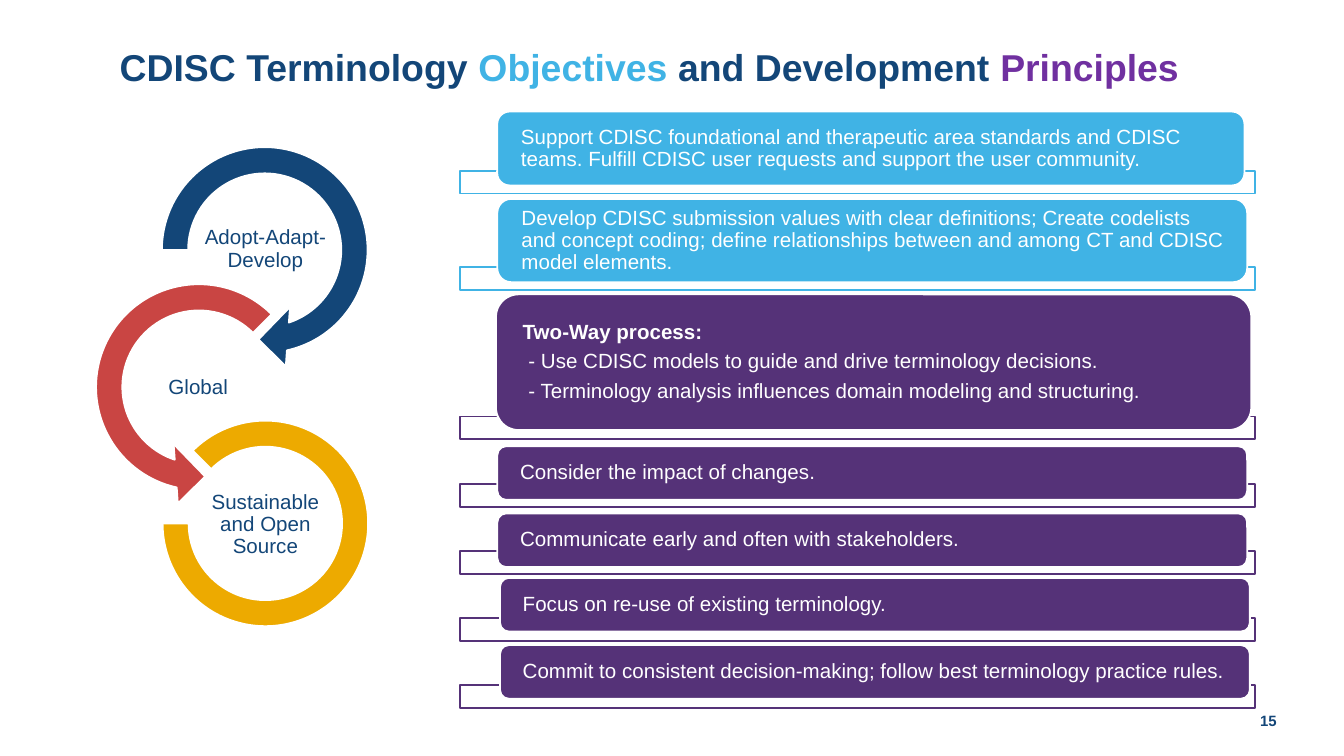
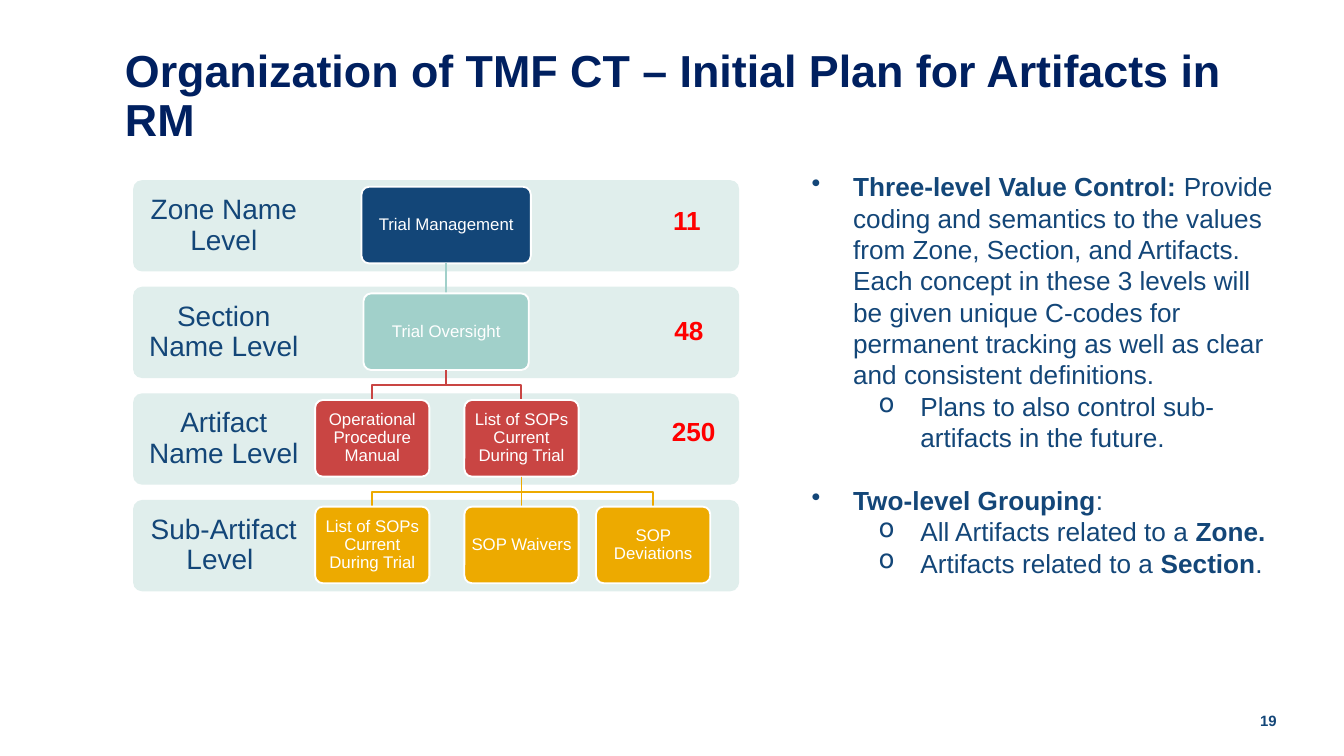
from dataclasses import dataclass
from typing import Any, Optional

from lxml.etree import SubElement
from pptx import Presentation
from pptx.dml.color import RGBColor
from pptx.enum.shapes import MSO_CONNECTOR, MSO_SHAPE
from pptx.enum.text import MSO_ANCHOR, MSO_AUTO_SIZE, PP_ALIGN
from pptx.oxml.ns import qn
from pptx.util import Inches, Pt

COLOURS = {
    "navy": "134678", "sky": "40B3E5", "violet": "7030A0", "purple": "553278",
    "red": "C94543", "gold": "EDAA00", "teal": "A1D0CA", "mist": "E0EEEC",
    "midnight": "002060", "count": "FF0000", "white": "FFFFFF",
}
MARGINS = ("margin_left", "margin_top", "margin_right", "margin_bottom")
BULLETS = [("•", 0.31), ("o", 0.81)]
HANGING = 0.31


@dataclass
class Run:
    text: str
    colour: Optional[str] = None
    bold: Optional[bool] = None


@dataclass
class Para:
    runs: list[Run]
    level: Optional[int] = None
    before: float = 0


@dataclass
class TextStyle:
    size: float
    colour: str = "white"
    bold: bool = False
    align: PP_ALIGN = PP_ALIGN.LEFT
    anchor: MSO_ANCHOR = MSO_ANCHOR.MIDDLE
    spacing: Optional[float] = 0.9
    insets: tuple[float, ...] = (0, 0, 0, 0)


@dataclass
class Card:
    box: tuple[float, ...]
    frame_top: float
    colour: str
    paras: list[Para]


@dataclass
class Ring:
    kind: MSO_SHAPE
    box: tuple[float, ...]
    adjustments: list[float]
    colour: str
    label: str
    label_at: tuple[float, float]


@dataclass
class Level:
    label: str
    count: str = ""
    count_box: tuple[float, ...] = ()


@dataclass
class Node:
    label: str
    level: int
    centre: float
    width: float
    colour: str
    parent: Optional[int] = None


def rgb(name: str) -> RGBColor:
    return RGBColor.from_string(COLOURS[name])


def inches(values: tuple[float, ...]) -> list[int]:
    return [Inches(value) for value in values]


def apply(target: Any, values: dict[str, Any]) -> None:
    for name, value in values.items():
        setattr(target, name, value)


def plain(text: str) -> list[Para]:
    return [Para([Run(text)])]


def write(frame: Any, paras: list[Para], style: TextStyle) -> None:
    apply(frame, {"word_wrap": True, "auto_size": MSO_AUTO_SIZE.NONE,
                  "vertical_anchor": style.anchor,
                  **dict(zip(MARGINS, inches(style.insets)))})
    for index, para in enumerate(paras):
        paragraph = frame.add_paragraph() if index else frame.paragraphs[0]
        if para.level is not None:
            add_bullet(paragraph, para.level)
        apply(paragraph, {"alignment": style.align, "line_spacing": style.spacing,
                          "space_before": Pt(para.before), "space_after": Pt(0)})
        for part in para.runs:
            run = paragraph.add_run()
            run.text = part.text
            bold = style.bold if part.bold is None else part.bold
            apply(run.font, {"name": "Arial", "size": Pt(style.size), "bold": bold})
            run.font.color.rgb = rgb(part.colour or style.colour)


def add_bullet(paragraph: Any, level: int) -> None:
    mark, left = BULLETS[level]
    paragraph.level = level
    properties = paragraph._p.get_or_add_pPr()
    properties.set("marL", str(Inches(left)))
    properties.set("indent", str(-Inches(HANGING)))
    SubElement(properties, qn("a:buChar")).set("char", mark)


def add_label(slide: Any, box: tuple[float, ...], paras: list[Para], style: TextStyle) -> None:
    write(slide.shapes.add_textbox(*inches(box)).text_frame, paras, style)


def add_figure(slide: Any, kind: MSO_SHAPE, box: tuple[float, ...], fill: str,
               line: Optional[str] = "white") -> Any:
    figure = slide.shapes.add_shape(kind, *inches(box))
    figure.shadow.inherit = False
    figure.fill.solid()
    figure.fill.fore_color.rgb = rgb(fill)
    if line:
        figure.line.color.rgb = rgb(line)
        figure.line.width = Pt(1)
    else:
        figure.line.fill.background()
    return figure


def add_titled_slide(deck: Any, box: tuple[float, ...], runs: list[Run],
                     style: TextStyle, number: str) -> Any:
    slide = deck.slides.add_slide(deck.slide_layouts[5])
    title = slide.shapes.title
    apply(title, dict(zip(("left", "top", "width", "height"), inches(box))))
    write(title.text_frame, [Para(runs)], style)
    add_label(slide, (9.17, 5.21, 0.33, 0.3), plain(number), PAGE_NUMBER)
    return slide


def add_card(slide: Any, card: Card) -> None:
    frame = add_figure(slide, MSO_SHAPE.RECTANGLE, (3.42, card.frame_top, 5.92, 0.17),
                       "white", card.colour)
    white = frame._element.spPr.find(qn("a:solidFill"))[0]
    SubElement(white, qn("a:alpha")).set("val", "90000")
    body = add_figure(slide, MSO_SHAPE.ROUNDED_RECTANGLE, card.box, card.colour)
    write(body.text_frame, card.paras, CARD_TEXT)


def add_ring(slide: Any, ring: Ring) -> None:
    figure = add_figure(slide, ring.kind, ring.box, ring.colour)
    for index, value in enumerate(ring.adjustments):
        figure.adjustments[index] = value
    add_label(slide, (*ring.label_at, 0.99, 0.49), plain(ring.label), RING_TEXT)


def level_top(level: int) -> float:
    return 1.34 + level * (3.72 - 1.34) / 3


def node_top(node: Node) -> float:
    return level_top(node.level) + 0.05


def add_level(slide: Any, index: int, level: Level) -> None:
    top = level_top(index)
    band = add_figure(slide, MSO_SHAPE.ROUNDED_RECTANGLE, (0.99, top, 4.51, 0.68), "mist", None)
    band.adjustments[0] = 0.1
    add_label(slide, (0.99, top, 1.35, 0.68), plain(level.label), LEVEL_TEXT)
    if level.count:
        add_label(slide, level.count_box, plain(level.count), COUNT_TEXT)


def add_link(slide: Any, parent: Node, child: Node) -> None:
    """Join the foot of the parent to the head of the child."""
    start, end = node_top(parent) + NODE_HEIGHT, node_top(child)
    if parent.centre == child.centre:
        link = slide.shapes.add_connector(
            MSO_CONNECTOR.STRAIGHT, *inches((parent.centre, start, child.centre, end)))
        SubElement(link._element.spPr, qn("a:effectLst"))
    else:
        middle = (start + end) / 2
        bends = [(parent.centre, middle), (child.centre, middle), (child.centre, end)]
        builder = slide.shapes.build_freeform(*inches((parent.centre, start)))
        builder.add_line_segments([tuple(inches(bend)) for bend in bends], close=False)
        link = builder.convert_to_shape()
        link.shadow.inherit = False
        link.fill.background()
    link.line.color.rgb = rgb(child.colour)
    link.line.width = Pt(1)


def add_node(slide: Any, node: Node) -> None:
    box = (node.centre - node.width / 2, node_top(node), node.width, NODE_HEIGHT)
    figure = add_figure(slide, MSO_SHAPE.ROUNDED_RECTANGLE, box, node.colour)
    figure.adjustments[0] = 0.1
    write(figure.text_frame, plain(node.label), NODE_TEXT)


NODE_HEIGHT = 0.57
TEXT_INSETS = (0.1, 0.05, 0.1, 0.05)
CENTRE = PP_ALIGN.CENTER
PAGE_NUMBER = TextStyle(8, "navy", True, PP_ALIGN.RIGHT, spacing=None)
CARD_TEXT = TextStyle(11, insets=(0.15, 0, 0.12, 0))
RING_TEXT = TextStyle(11, "navy", align=CENTRE, insets=(0.01,) * 4)
LEVEL_TEXT = TextStyle(15, "navy", align=CENTRE, insets=(0.11,) * 4)
NODE_TEXT = TextStyle(9, align=CENTRE, insets=(0.02,) * 4)
COUNT_TEXT = TextStyle(14, "count", True, anchor=MSO_ANCHOR.TOP, spacing=None,
                       insets=TEXT_INSETS)
NOTES_TEXT = TextStyle(14, "navy", anchor=MSO_ANCHOR.TOP, spacing=None, insets=TEXT_INSETS)

CARDS = [
    Card((3.7, 0.83, 5.56, 0.55), 1.27, "sky", plain(
        "Support CDISC foundational and therapeutic area standards and CDISC teams. "
        "Fulfill CDISC user requests and support the user community.")),
    Card((3.7, 1.48, 5.58, 0.62), 1.99, "sky", plain(
        "Develop CDISC submission values with clear definitions; Create codelists and concept "
        "coding; define relationships between and among CT and CDISC model elements.")),
    Card((3.69, 2.19, 5.62, 1.01), 3.1, "purple", [
        Para([Run("Two-Way process:", bold=True)]),
        Para([Run(" - Use CDISC models to guide and drive terminology decisions.")], before=4),
        Para([Run(" - Terminology analysis influences domain modeling and structuring.")],
             before=4)]),
    Card((3.7, 3.32, 5.58, 0.4), 3.6, "purple", plain("Consider the impact of changes.")),
    Card((3.7, 3.82, 5.58, 0.4), 4.1, "purple",
         plain("Communicate early and often with stakeholders.")),
    Card((3.72, 4.3, 5.58, 0.4), 4.6, "purple", plain("Focus on re-use of existing terminology.")),
    Card((3.72, 4.8, 5.58, 0.4), 5.1, "purple", plain(
        "Commit to consistent decision-making; follow best terminology practice rules.")),
]
RINGS = [
    Ring(MSO_SHAPE.CIRCULAR_ARROW, (1.08, 0.97, 1.78, 1.78), [0.11, 11.42, 45, 108, 0.125],
         "navy", "Adopt-Adapt-Develop", (1.48, 1.61)),
    Ring(MSO_SHAPE.LEFT_CIRCULAR_ARROW, (0.59, 1.99, 1.78, 1.78), [0.11, 11.42, 63, 189, 0.125],
         "red", "Global", (0.98, 2.64)),
    Ring(MSO_SHAPE.BLOCK_ARC, (1.21, 3.13, 1.53, 1.53), [135, 108, 0.127],
         "gold", "Sustainable and Open Source", (1.48, 3.66)),
]
LEVELS = [
    Level("Zone Name Level", "11", (4.91, 1.47, 0.58, 0.34)),
    Level("Section Name Level", "48", (4.92, 2.29, 0.53, 0.34)),
    Level("Artifact Name Level", "250", (4.9, 3.04, 0.68, 0.34)),
    Level("Sub-Artifact Level "),
]
NODES = [
    Node("Trial Management", 0, 3.32, 1.26, "navy"),
    Node("Trial Oversight", 1, 3.32, 1.23, "teal", 0),
    Node("Operational Procedure Manual", 2, 2.77, 0.85, "red", 1),
    Node("List of SOPs Current During Trial", 2, 3.88, 0.85, "red", 1),
    Node("List of SOPs Current During Trial", 3, 2.77, 0.85, "gold", 3),
    Node("SOP Waivers", 3, 3.88, 0.85, "gold", 3),
    Node("SOP Deviations", 3, 4.86, 0.85, "gold", 3),
]
CONTROL_NOTES = [
    Para([Run("Three-level Value Control: ", bold=True),
          Run("Provide coding and semantics to the values from Zone, Section, and Artifacts. "
              "Each concept in these 3 levels will be given unique C-codes for permanent "
              "tracking as well as clear and consistent definitions.")], 0),
    Para([Run("Plans to also control sub-artifacts in the future.")], 1),
    Para([Run("Two-level Grouping", bold=True), Run(":")], 0, before=16.8),
    Para([Run("All Artifacts related to a "), Run("Zone.", bold=True)], 1),
    Para([Run("Artifacts related to a "), Run("Section", bold=True), Run(".")], 1),
]


def main() -> None:
    deck = Presentation()
    apply(deck, {"slide_width": Inches(10), "slide_height": Inches(10) * 9 // 16})

    principles = add_titled_slide(
        deck, (0.89, 0.17, 8.91, 0.69),
        [Run("CDISC Terminology "), Run("Objectives", "sky"), Run(" and Development "),
         Run("Principles", "violet")], TextStyle(20, "navy", True), "15")
    for card in CARDS:
        add_card(principles, card)
    for ring in RINGS:
        add_ring(principles, ring)

    organization = add_titled_slide(
        deck, (0.93, 0.18, 8.62, 1.09),
        [Run("Organization of TMF CT – Initial Plan for Artifacts in RM")],
        TextStyle(24, "midnight", True), "19")
    for index, level in enumerate(LEVELS):
        add_level(organization, index, level)
    for node in NODES:
        if node.parent is not None:
            add_link(organization, NODES[node.parent], node)
        add_node(organization, node)
    add_label(organization, (5.94, 1.22, 3.7, 3.67), CONTROL_NOTES, NOTES_TEXT)

    deck.save("out.pptx")


if __name__ == "__main__":
    main()
